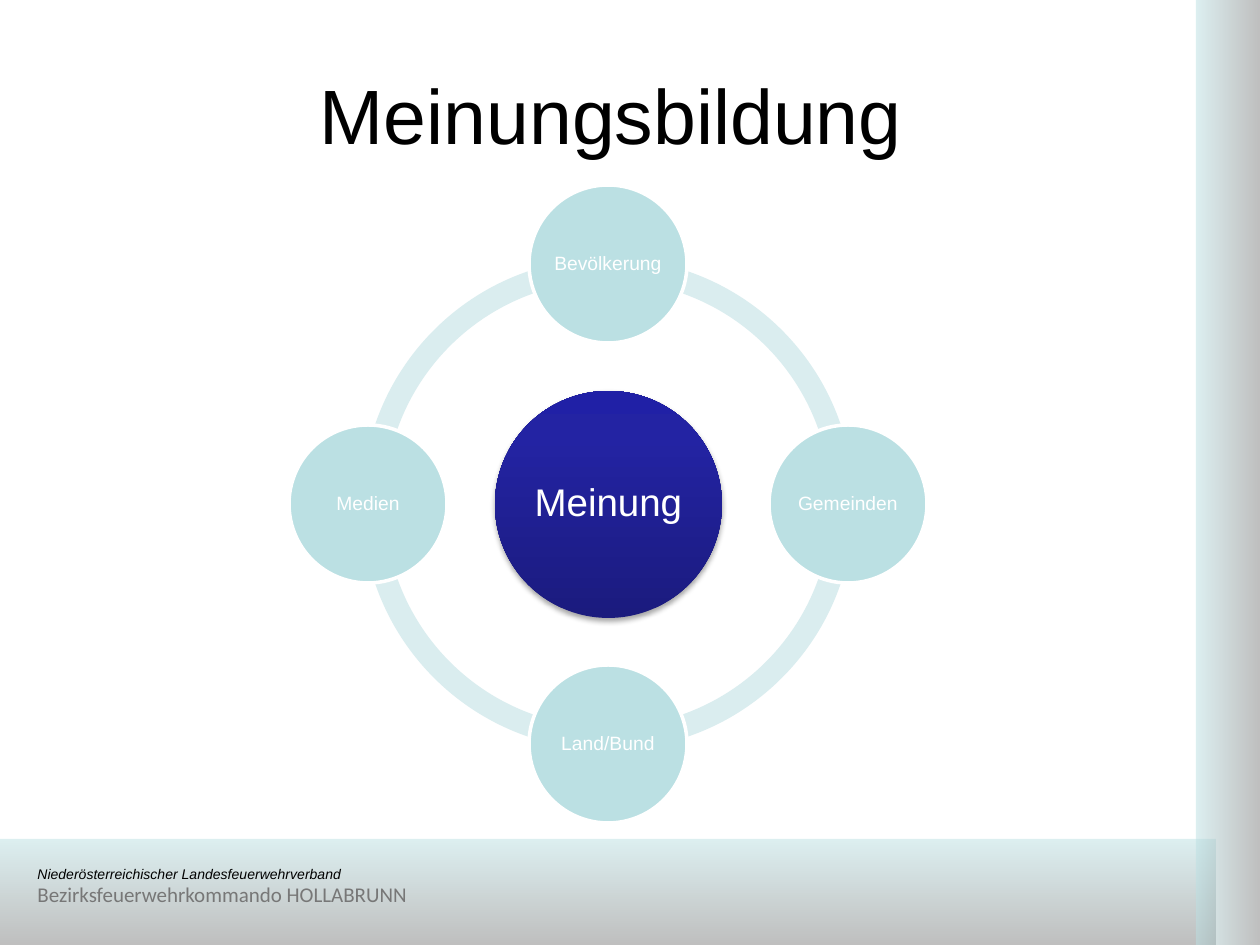
import lxml.etree
import pptx
import pptx.dml.color
import pptx.enum.shapes
import pptx.enum.text
import pptx.oxml
import pptx.util

PX = 914400 // 126
COLORS = {
    "white": "FFFFFF", "black": "000000", "gray": "777777", "teal": "BBE0E3",
    "shade": "808080", "ring": "DAEDEF", "navy": "1B1B7E", "blue": "2323A3", "top": "2020A6",
}
NS = 'xmlns:a="http://schemas.openxmlformats.org/drawingml/2006/main"'
SHAPE = pptx.enum.shapes.MSO_SHAPE
RGB = pptx.dml.color.RGBColor.from_string


def add_shape(kind, box, color=None, stops=(), angle=0, alpha=100):
    sp = s.shapes.add_shape(kind, *[v * PX for v in box])
    sp.shadow.inherit = False
    sp.line.fill.background()
    if color:
        sp.fill.solid()
        sp.fill.fore_color.rgb = RGB(COLORS[color])
        return sp
    sp.fill.background()
    gs = "".join(
        f'<a:gs pos="{pos * 1000}"><a:srgbClr val="{COLORS[name]}">'
        f'<a:alpha val="{alpha * 1000}"/></a:srgbClr></a:gs>'
        for pos, name in stops
    )
    grad = pptx.oxml.parse_xml(
        f'<a:gradFill {NS} rotWithShape="1"><a:gsLst>{gs}</a:gsLst>'
        f'<a:lin ang="{angle * 60000}" scaled="0"/></a:gradFill>'
    )
    spPr = sp._element.spPr
    spPr.replace(spPr.find(pptx.oxml.ns.qn("a:noFill")), grad)
    return sp


def add_run(p, text, size, color, font="Arial", italic=False):
    r = p.add_run()
    r.text = text
    r.font.size = pptx.util.Pt(size)
    r.font.name = font
    r.font.italic = italic
    r.font.color.rgb = RGB(COLORS[color])


prs = pptx.Presentation()
prs.slide_width = pptx.util.Inches(10)
prs.slide_height = pptx.util.Inches(7.5)
s = prs.slides.add_slide(prs.slide_layouts[6])

for box, angle in [((0, 839, 1216, 106), 90), ((1196, 0, 64, 945), 0)]:
    add_shape(SHAPE.RECTANGLE, box, stops=[(0, "teal"), (100, "shade")], angle=angle, alpha=49)

footer = s.shapes.add_textbox(*[v * PX for v in (25, 859, 446, 55)])
p = footer.text_frame.paragraphs[0]
add_run(p, "Niederösterreichischer Landesfeuerwehrverband", 8, "black", italic=True)
p.add_line_break()
add_run(p, "Bezirksfeuerwehrkommando HOLLABRUNN", 12, "gray", font="Calibri")

title = s.shapes.add_textbox(*[v * PX for v in (44, 35, 1134, 158)])
tf = title.text_frame
tf.word_wrap = True
tf.vertical_anchor = pptx.enum.text.MSO_ANCHOR.MIDDLE
p = tf.paragraphs[0]
p.alignment = pptx.enum.text.PP_ALIGN.CENTER
add_run(p, "Meinungsbildung", 44, "black")

CX, CY, ORBIT = 608, 504, 240
RING, HUB, NODE = 492, 227, 158

for start, end in [(108, 162), (54, 108), (0, 54), (162, 0)]:
    arc = add_shape(SHAPE.BLOCK_ARC, (CX - RING // 2, CY - RING // 2, RING, RING), "ring")
    for i, value in enumerate((start, end, 0.046)):
        arc.adjustments[i] = value

circles = [
    ("Meinung", 0, 0, HUB, 22),
    ("Bevölkerung", 0, -1, NODE, 11),
    ("Gemeinden", 1, 0, NODE, 11),
    ("Land/Bund", 0, 1, NODE, 11),
    ("Medien", -1, 0, NODE, 11),
]
for text, dx, dy, size, pt in circles:
    box = (CX + dx * ORBIT - size // 2, CY + dy * ORBIT - size // 2, size, size)
    if size == HUB:
        sp = add_shape(SHAPE.OVAL, box, stops=[(0, "navy"), (80, "blue"), (100, "top")], angle=270)
        effects = sp._element.spPr.find(pptx.oxml.ns.qn("a:effectLst"))
        effects.append(lxml.etree.fromstring(
            f'<a:outerShdw {NS} blurRad="39370" dist="22860" dir="5400000" rotWithShape="0">'
            f'<a:srgbClr val="{COLORS["black"]}"><a:alpha val="35000"/></a:srgbClr></a:outerShdw>'
        ))
    else:
        sp = add_shape(SHAPE.OVAL, box, "teal")
        sp.line.color.rgb = RGB(COLORS["white"])
        sp.line.width = pptx.util.Pt(2)
    tf = sp.text_frame
    tf.word_wrap = False
    tf.margin_left = tf.margin_right = tf.margin_top = tf.margin_bottom = 3 * PX
    tf.vertical_anchor = pptx.enum.text.MSO_ANCHOR.MIDDLE
    p = tf.paragraphs[0]
    p.alignment = pptx.enum.text.PP_ALIGN.CENTER
    p.line_spacing = 0.9
    add_run(p, text, pt, "white")

prs.save("out.pptx")
